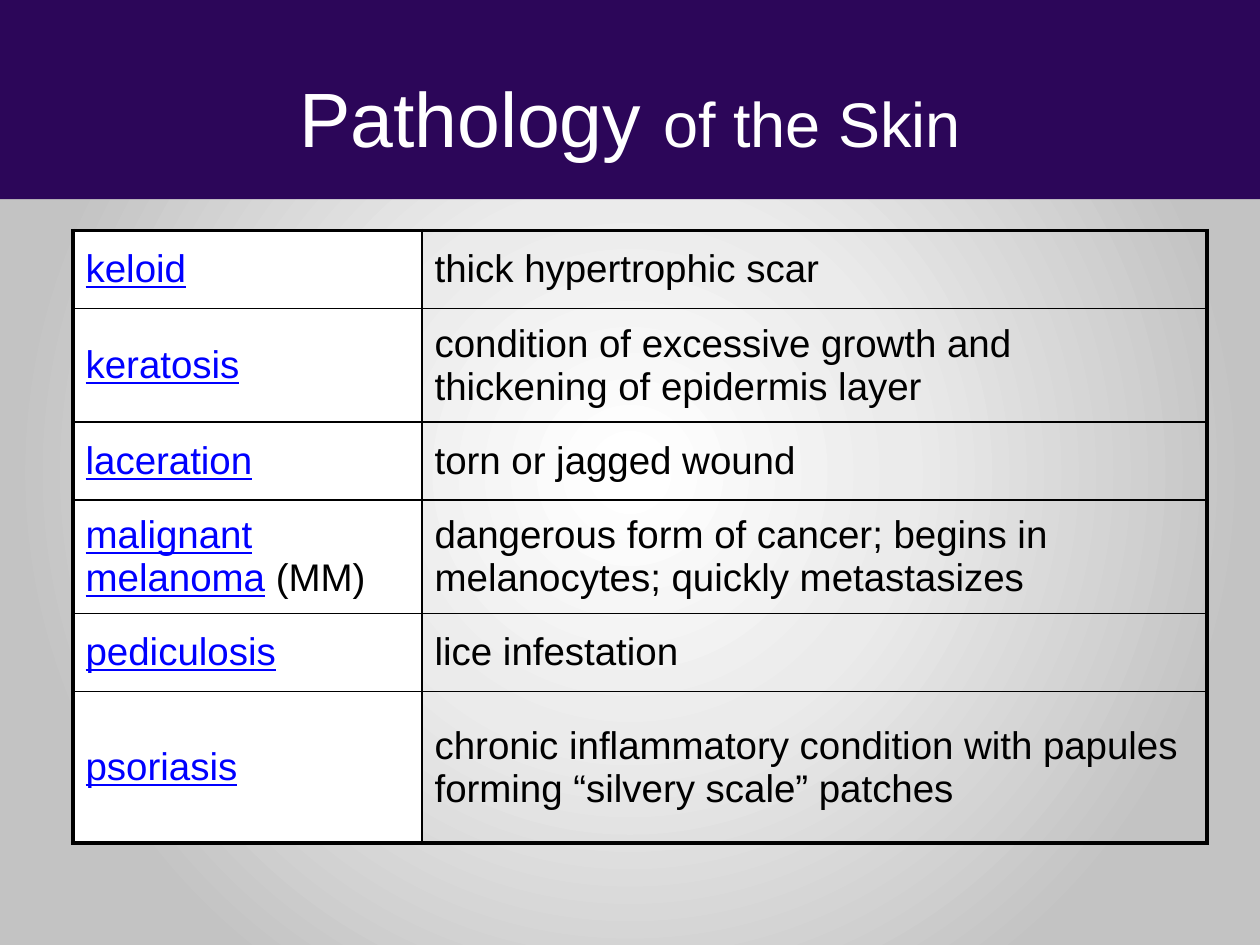
"""Build the slide on skin pathology: a title band above a table of terms."""
from lxml import etree
from pptx import Presentation
from pptx import util as u
from pptx.dml.color import RGBColor
from pptx.enum import shapes, text
from pptx.oxml import parse_xml
from pptx.oxml.ns import nsdecls, qn

TITLE = [("Pathology ", "title"), ("of the Skin", "subtitle")]
# Each row: term, text after the term, definition, row height
TERMS = [
    ("keloid", "", "thick hypertrophic scar", 0.62),
    ("keratosis", "", "condition of excessive growth and thickening of epidermis layer", 0.9),
    ("laceration", "", "torn or jagged wound", 0.62),
    ("malignant melanoma", " (MM)",
     "dangerous form of cancer; begins in melanocytes; quickly metastasizes", 0.9),
    ("pediculosis", "", "lice infestation", 0.62),
    ("psoriasis", "",
     "chronic inflammatory condition with papules forming “silvery scale” patches", 1.2),
]
COLUMNS = [2.77, 6.23]
THEME = {
    "font": "Arial",
    "sizes": {"title": 44, "subtitle": 36, "term": 22, "body": 22},
    "colors": {"title": "FFFFFF", "subtitle": "FFFFFF", "term": "0000FF", "body": "000000",
               "band": "2C0659", "cell": "FFFFFF", "border": "000000"},
    "background": [(2, "FFFFFF"), (35, "EBEBEB"), (79, "C3C3C3")],
    "outer": 2.25,
    "inner": 1,
}


def color(name):
    return RGBColor.from_string(THEME["colors"][name])


def add_spans(para, spans):
    for words, style in spans:
        span = para.add_run()
        span.text = words
        span.font.name = THEME["font"]
        span.font.size = u.Pt(THEME["sizes"][style])
        span.font.color.rgb = color(style)
        span.font.underline = style == "term"


def paint_background(page):
    page.background.fill.gradient()
    old = next(page.element.iter(qn("a:gradFill")))
    stops = "".join(f'<a:gs pos="{at * 1000}"><a:srgbClr val="{tone}"/></a:gs>'
                    for at, tone in THEME["background"])
    old.getparent().replace(old, parse_xml(
        f'<a:gradFill {nsdecls("a")} rotWithShape="1"><a:gsLst>{stops}</a:gsLst>'
        '<a:path path="circle"><a:fillToRect l="50000" t="50000" r="50000" b="50000"/></a:path>'
        '</a:gradFill>'))


def add_title(page):
    band = page.shapes.add_shape(shapes.MSO_SHAPE.RECTANGLE, 0, 0, u.Inches(10), u.Inches(1.58))
    band.shadow.inherit = False
    band.fill.solid()
    band.fill.fore_color.rgb = color("band")
    band.line.fill.background()
    box = page.shapes.add_textbox(u.Inches(0.5), u.Inches(0.3), u.Inches(9), u.Inches(1.25))
    box.text_frame.word_wrap = True
    box.text_frame.vertical_anchor = text.MSO_ANCHOR.MIDDLE
    para = box.text_frame.paragraphs[0]
    para.alignment = text.PP_ALIGN.CENTER
    add_spans(para, TITLE)


def set_borders(cell, outer_sides):
    properties = cell._tc.get_or_add_tcPr()
    for index, side in enumerate("LRTB"):
        width = THEME["outer" if side in outer_sides else "inner"]
        line = etree.Element(qn(f"a:ln{side}"), w=str(u.Pt(width)))
        fill = etree.SubElement(line, qn("a:solidFill"))
        etree.SubElement(fill, qn("a:srgbClr"), val=THEME["colors"]["border"])
        properties.insert(index, line)


def add_terms(page):
    heights = [row[-1] for row in TERMS]
    table = page.shapes.add_table(
        len(TERMS), len(COLUMNS), u.Inches(0.58), u.Inches(1.83),
        u.Inches(sum(COLUMNS)), u.Inches(sum(heights))).table
    table.first_row = table.horz_banding = False
    for column, width in zip(table.columns, COLUMNS):
        column.width = u.Inches(width)
    for index, (term, suffix, definition, height) in enumerate(TERMS):
        table.rows[index].height = u.Inches(height)
        term_spans = [(term, "term")] + ([(suffix, "body")] if suffix else [])
        edges = "T" * (index == 0) + "B" * (index == len(TERMS) - 1)
        columns = [(term_spans, "L"), ([(definition, "body")], "R")]
        for number, (spans, side) in enumerate(columns):
            cell = table.cell(index, number)
            cell.vertical_anchor = text.MSO_ANCHOR.MIDDLE
            if side == "L":
                cell.fill.solid()
                cell.fill.fore_color.rgb = color("cell")
            else:
                cell.fill.background()
            add_spans(cell.text_frame.paragraphs[0], spans)
            set_borders(cell, edges + side)


def main():
    deck = Presentation()
    deck.slide_width, deck.slide_height = u.Inches(10), u.Inches(7.5)
    page = deck.slides.add_slide(deck.slide_layouts[6])
    paint_background(page)
    add_title(page)
    add_terms(page)
    deck.save("out.pptx")


if __name__ == "__main__":
    main()
